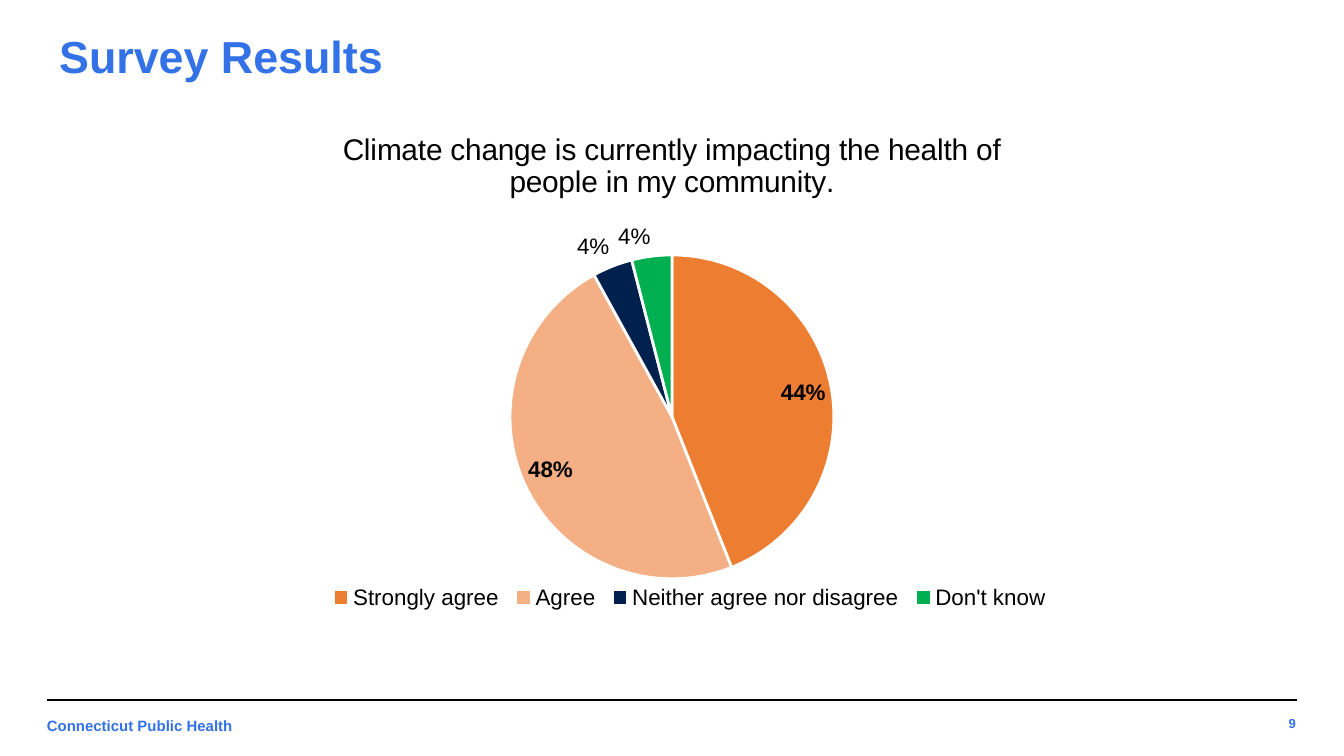
import dataclasses

import lxml.etree
import pptx
import pptx.chart.data
import pptx.dml.color
import pptx.enum.chart
import pptx.enum.shapes
import pptx.enum.text
import pptx.oxml.ns
import pptx.util


@dataclasses.dataclass(frozen=True)
class Theme:
    font: str = "Arial"
    accent: str = "3371E7"
    ink: str = "000000"
    paper: str = "FFFFFF"
    slices: tuple = ("ED7D31", "F4B084", "00214D", "00B050")
    heading: int = 24
    question: int = 16
    label: int = 12
    footer: int = 8
    number: int = 7


THEME = Theme()
WIDTH = 10
HEIGHT = WIDTH * 9 / 16
ANSWERS = {
    "Strongly agree": 0.44,
    "Agree": 0.48,
    "Neither agree nor disagree": 0.04,
    "Don't know": 0.04,
}
SMALL_SHARE = 0.1


def inches(*lengths):
    return [pptx.util.Inches(length) for length in lengths]


def rgb(value):
    return pptx.dml.color.RGBColor.from_string(value)


def style_font(font, size, color=THEME.ink, bold=False):
    font.name = THEME.font
    font.size = pptx.util.Pt(size)
    font.bold = bold
    font.color.rgb = rgb(color)


def write_text(shape, text, size, align, anchor):
    frame = shape.text_frame
    frame.text = text
    frame.word_wrap = True
    frame.auto_size = pptx.enum.text.MSO_AUTO_SIZE.NONE
    frame.vertical_anchor = anchor
    frame.margin_left = frame.margin_right = pptx.util.Inches(0.1)
    frame.margin_top = frame.margin_bottom = pptx.util.Inches(0.1)
    para = frame.paragraphs[0]
    para.alignment = align
    style_font(para.runs[0].font, size, THEME.accent, True)


def place_layout(owner, position, settings):
    for existing in owner.findall(pptx.oxml.ns.qn("c:layout")):
        owner.remove(existing)
    layout = lxml.etree.Element(pptx.oxml.ns.qn("c:layout"))
    owner.insert(position, layout)
    manual = lxml.etree.SubElement(layout, pptx.oxml.ns.qn("c:manualLayout"))
    for name, value in settings.items():
        lxml.etree.SubElement(manual, pptx.oxml.ns.qn(f"c:{name}")).set("val", str(value))


def add_heading(page, box):
    title = page.shapes.title
    title.left, title.top, title.width, title.height = inches(*box)
    write_text(title, "Survey Results", THEME.heading,
               pptx.enum.text.PP_ALIGN.LEFT, pptx.enum.text.MSO_ANCHOR.MIDDLE)


def add_survey_pie(page, box):
    data = pptx.chart.data.CategoryChartData(number_format="0%")
    data.categories = list(ANSWERS)
    data.add_series("Series 1", list(ANSWERS.values()))
    chart = page.shapes.add_chart(
        pptx.enum.chart.XL_CHART_TYPE.PIE, *inches(*box), data).chart
    style_font(chart.font, 10)

    chart.has_title = True
    question = chart.chart_title.text_frame
    question.text = "Climate change is currently impacting the health of people in my community."
    style_font(question.paragraphs[0].runs[0].font, THEME.question)

    chart.has_legend = True
    legend = chart.legend
    legend.position = pptx.enum.chart.XL_LEGEND_POSITION.BOTTOM
    legend.include_in_layout = False
    style_font(legend.font, THEME.label)

    plot = chart.plots[0]
    plot.vary_by_categories = True
    plot.has_data_labels = True
    best_fit = pptx.enum.chart.XL_LABEL_POSITION.BEST_FIT
    series = plot.series[0]
    for labels in (plot.data_labels, series.data_labels):
        labels.show_value = True
        labels.show_percentage = False
        labels.number_format = "0%"
        labels.number_format_is_linked = False
        labels.position = best_fit
        style_font(labels.font, THEME.label, bold=True)

    for index, (share, color) in enumerate(zip(ANSWERS.values(), THEME.slices)):
        point = series.points[index]
        point.format.fill.solid()
        point.format.fill.fore_color.rgb = rgb(color)
        point.format.line.color.rgb = rgb(THEME.paper)
        point.format.line.width = pptx.util.Pt(1.5)
        if share < SMALL_SHARE:
            style_font(point.data_label.font, THEME.label)
            point.data_label.position = best_fit

    width, height = box[2:]
    edges = {"xMode": "edge", "yMode": "edge"}
    diameter = 2.41
    place_layout(chart.chart_title._element, 1,
                 {**edges, "x": 1.01 / width, "y": 0.14 / height})
    place_layout(plot._element.getparent(), 0,
                 {"layoutTarget": "inner", **edges,
                  "x": (width - diameter) / 2 / width, "y": 1.11 / height,
                  "w": diameter / width, "h": diameter / height})
    place_layout(legend._element, 1,
                 {**edges, "x": 0.91 / width, "y": 3.46 / height,
                  "w": 5.45 / width, "h": 0.4 / height})


def add_footer(page, box):
    left, top, width, height = box
    rule = page.shapes.add_connector(
        pptx.enum.shapes.MSO_CONNECTOR.STRAIGHT, *inches(left + width, top, left, top))
    rule.line.color.rgb = rgb(THEME.ink)
    rule.line.width = pptx.util.Pt(0.75)
    lxml.etree.SubElement(rule._element.spPr, pptx.oxml.ns.qn("a:effectLst"))

    inset = 0.1
    owner = page.shapes.add_textbox(*inches(left - inset, top + 0.02, 3.28, height))
    write_text(owner, "Connecticut Public Health", THEME.footer,
               pptx.enum.text.PP_ALIGN.LEFT, pptx.enum.text.MSO_ANCHOR.TOP)
    number = page.shapes.add_textbox(*inches(left + width + inset - 0.61, top + 0.05, 0.6, 0.25))
    write_text(number, "9", THEME.number,
               pptx.enum.text.PP_ALIGN.RIGHT, pptx.enum.text.MSO_ANCHOR.MIDDLE)


def main():
    deck = pptx.Presentation()
    deck.slide_width, deck.slide_height = inches(WIDTH, HEIGHT)
    page = deck.slides.add_slide(deck.slide_layouts[5])
    add_heading(page, (0.34, 0.25, 9.32, 0.33))
    add_survey_pie(page, (0.15 * WIDTH, 0.14 * HEIGHT, 0.7 * WIDTH, 4))
    add_footer(page, (0.35, 5.21, 9.3, 0.34))
    deck.save("out.pptx")


if __name__ == "__main__":
    main()
